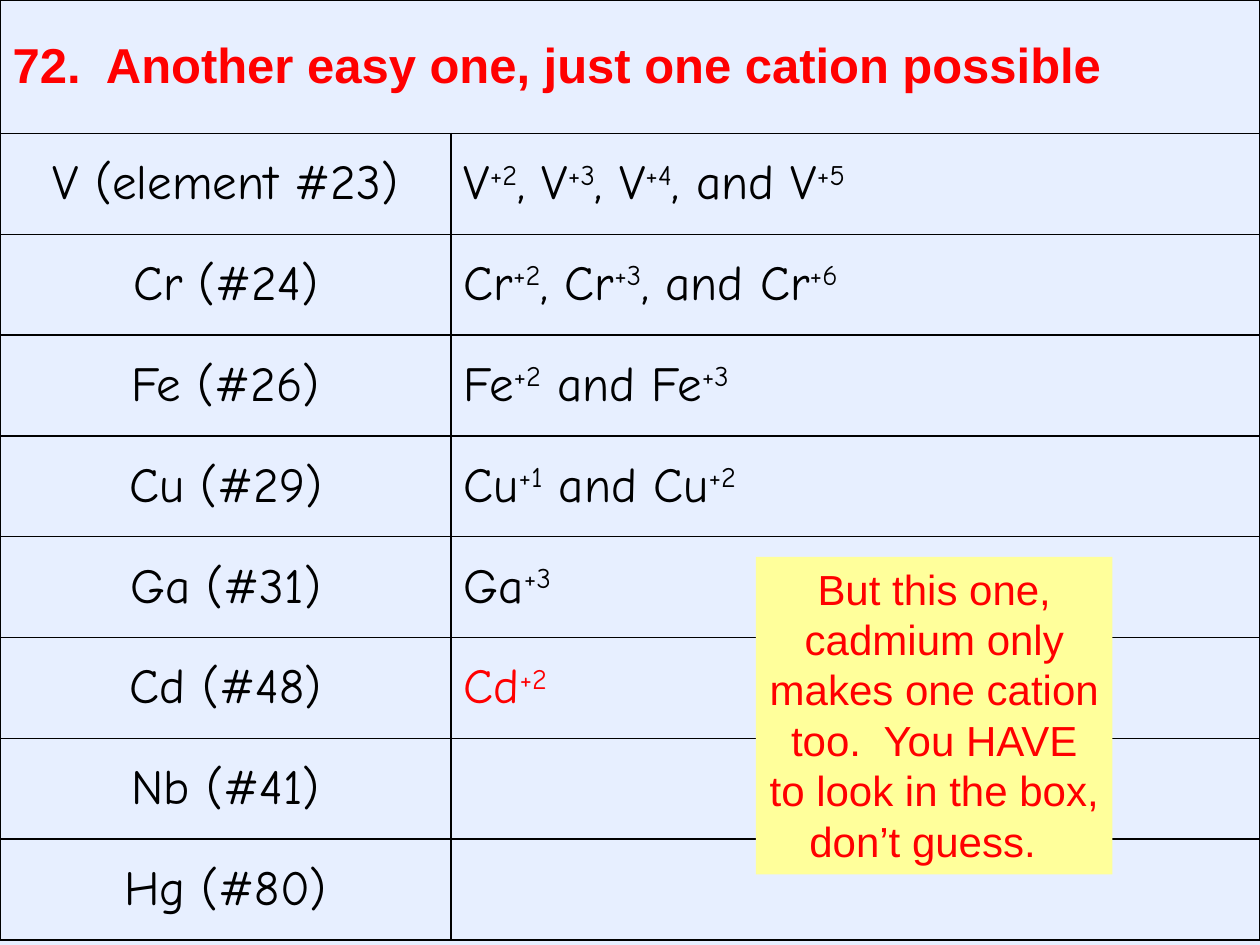
from lxml import etree
from pptx import Presentation
from pptx import util as u
from pptx.dml.color import RGBColor
from pptx.enum import shapes, text
from pptx.oxml.ns import qn

PX = 9144  # EMU per px, at 100 px to the inch
PAPER, NOTE, RED, BLACK = "E7EFFF", "FFFF9B", "FF0000", "000000"

HEADING = "72.  Another easy one, just one cation possible"
# Element, its cations (every second piece between bars is raised), ink
ROWS = [
    ("V (element #23)", "V|+2|, V|+3|, V|+4|, and V|+5", BLACK),
    ("Cr (#24)", "Cr|+2|, Cr|+3|, and Cr|+6", BLACK),
    ("Fe (#26)", "Fe|+2| and Fe|+3", BLACK),
    ("Cu (#29)", "Cu|+1| and Cu|+2", BLACK),
    ("Ga (#31)", "Ga|+3", BLACK),
    ("Cd (#48)", "Cd|+2", RED),
    ("Nb (#41)", "", BLACK),
    ("Hg (#80)", "", BLACK),
]
REMARK = ("But this one, cadmium only makes one cation too.  "
          "You HAVE to look in the box, don’t guess.  ")

HEADING_FONT = {"name": "Arial", "size": u.Pt(28), "bold": True}
ROW_FONT = {"name": "Comic Neue", "size": u.Pt(28), "bold": False}
REMARK_FONT = {"name": "Arial", "size": u.Pt(24), "bold": False}


def px(*lengths):
    return [u.Emu(length * PX) for length in lengths]


def color(value):
    return RGBColor.from_string(value)


def paint(fill, value):
    fill.solid()
    fill.fore_color.rgb = color(value)


def write(frame, words, font, ink, align):
    para = frame.paragraphs[0]
    para.alignment = align
    for index, piece in enumerate(words.split("|")):
        span = para.add_run()
        span.text = piece
        for key, value in font.items():
            setattr(span.font, key, value)
        span.font.color.rgb = color(ink)
        if index % 2:
            span._r.get_or_add_rPr().set("baseline", "30000")


def draw_borders(cell):
    props = cell._tc.get_or_add_tcPr()
    for index, side in enumerate(("lnL", "lnR", "lnT", "lnB")):
        line = etree.Element(qn(f"a:{side}"), w=str(u.Pt(1)))
        solid = etree.SubElement(line, qn("a:solidFill"))
        etree.SubElement(solid, qn("a:srgbClr"), val=BLACK)
        props.insert(index, line)  # borders come before the fill


def add_cation_table(page, left, top, width, height):
    label_width, heading_height = 358, 106
    row_height = (height - heading_height) // len(ROWS)
    table = page.shapes.add_table(
        len(ROWS) + 1, 2, *px(left, top, width, height)).table
    table.first_row = table.horz_banding = False
    for column, size in zip(table.columns, px(label_width, width - label_width)):
        column.width = size
    heights = [heading_height] + [row_height] * len(ROWS)
    for row, size in zip(table.rows, px(*heights)):
        row.height = size

    for cell in table.iter_cells():
        cell.vertical_anchor = text.MSO_ANCHOR.MIDDLE
        paint(cell.fill, PAPER)
        draw_borders(cell)

    # Heading across both columns
    heading = table.cell(0, 0)
    heading.merge(table.cell(0, 1))
    write(heading.text_frame, HEADING, HEADING_FONT, RED, text.PP_ALIGN.LEFT)

    # One row for each element
    for number, (element, cations, ink) in enumerate(ROWS, 1):
        write(table.cell(number, 0).text_frame, element, ROW_FONT, BLACK,
              text.PP_ALIGN.CENTER)
        if cations:
            write(table.cell(number, 1).text_frame, cations, ROW_FONT, ink,
                  text.PP_ALIGN.LEFT)


def add_remark(page, left, top, width, height):
    box = page.shapes.add_shape(
        shapes.MSO_SHAPE.RECTANGLE, *px(left, top, width, height))
    box.shadow.inherit = False
    paint(box.fill, NOTE)
    box.line.fill.background()
    frame = box.text_frame
    frame.word_wrap = True
    frame.auto_size = text.MSO_AUTO_SIZE.SHAPE_TO_FIT_TEXT
    frame.vertical_anchor = text.MSO_ANCHOR.TOP
    write(frame, REMARK, REMARK_FONT, RED, text.PP_ALIGN.CENTER)


def main():
    deck = Presentation()
    deck.slide_width, deck.slide_height = px(1000, 750)
    page = deck.slides.add_slide(deck.slide_layouts[6])
    paint(page.background.fill, PAPER)
    add_cation_table(page, 0, 0, 1000, 750)
    add_remark(page, 600, 442, 283, 252)
    deck.save("out.pptx")


if __name__ == "__main__":
    main()
